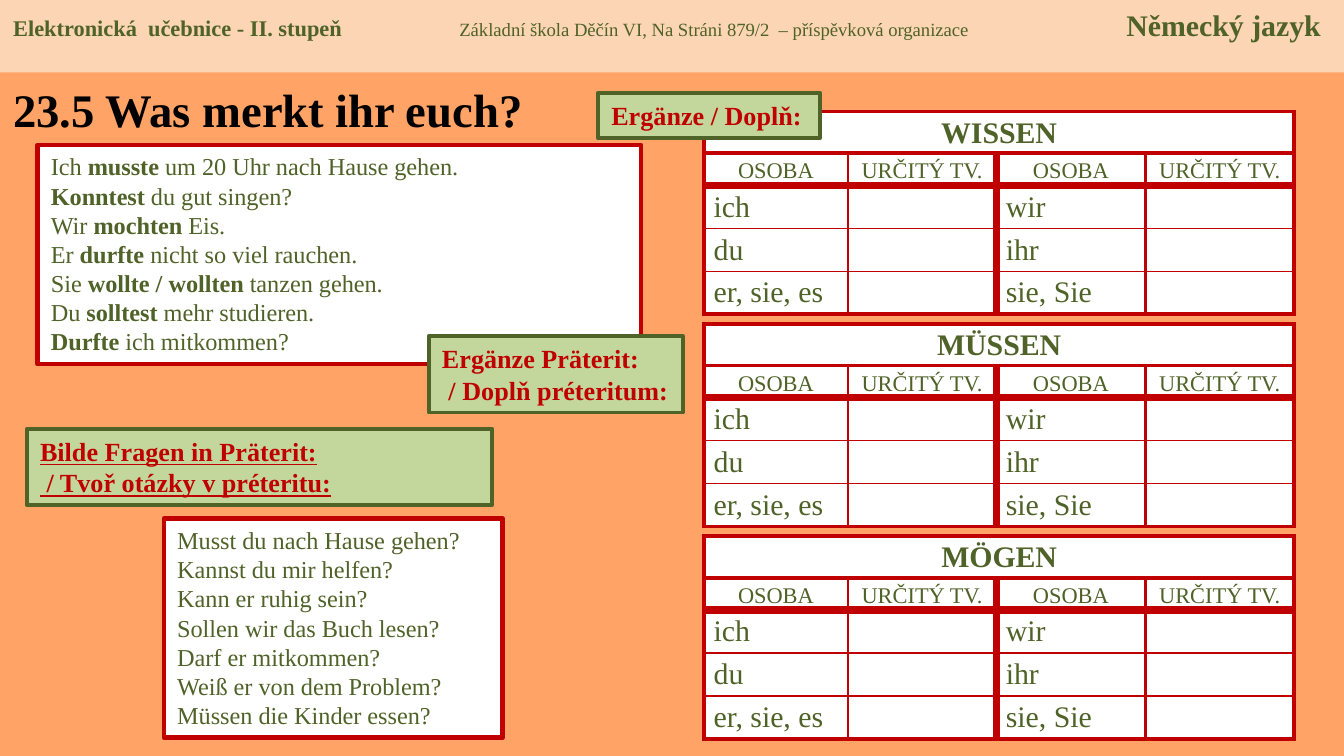
import pptx
import pptx.util
import pptx.dml.color
import pptx.enum.shapes
import pptx.enum.text
import pptx.oxml.ns
import lxml.etree

FONT = "Times New Roman"
COLORS = {
    "background": "FFA366", "header": "FCD5B5", "paper": "FFFFFF",
    "label": "C3D69B", "green": "4F6228", "red": "C00000", "black": "000000",
}
# Grid of square units, 0.1 inch each; boxes are (left, top, width, height)
COLUMNS, ROWS = 100, 56.25
ALIGN = pptx.enum.text.PP_ALIGN
ANCHOR = pptx.enum.text.MSO_ANCHOR

SENTENCES = [
    "Ich *musste* um 20 Uhr nach Hause gehen.",
    "*Konntest *du gut singen?",
    "Wir *mochten* Eis.",
    "Er *durfte *nicht so viel rauchen.",
    "Sie *wollte / wollten *tanzen gehen.",
    "Du *solltest *mehr studieren.",
    "*Durfte *ich mitkommen?",
]
QUESTIONS = [
    "Musst du nach Hause gehen?", "Kannst du mir helfen?",
    "Kann er ruhig sein?", "Sollen wir das Buch lesen?",
    "Darf er mitkommen?", "Weiß er von dem Problem?",
    "Müssen die Kinder essen?",
]
PERSONS = [("ich", "wir"), ("du", "ihr"), ("er, sie, es", "sie, Sie")]

TABLE_COLUMNS = [10.7, 11.1, 11.1, 11.1]
TABLE_ROWS = [3.1, 2.4, 3.2, 3.2, 3.2]
VERTICAL_RULES = [2.25, 1.5, 4.5, 1.5, 2.25]
HORIZONTAL_RULES = [2.25, 2.25, 4.5, 1, 1, 2.25]


def grid(units):
    return pptx.util.Inches(units / 10)


def color(name):
    return pptx.dml.color.RGBColor.from_string(COLORS[name])


def add_run(paragraph, text, size, ink, bold=False, underline=None):
    run = paragraph.add_run()
    run.text = text
    run.font.name = FONT
    run.font.size = pptx.util.Pt(size)
    run.font.color.rgb = color(ink)
    run.font.bold = bold
    run.font.underline = underline


def add_panel(slide, box, fill, outline=None, width=0):
    """Rectangle with left-aligned text starting at its top."""
    panel = slide.shapes.add_shape(
        pptx.enum.shapes.MSO_SHAPE.RECTANGLE, *map(grid, box))
    panel.shadow.inherit = False
    panel.fill.solid()
    panel.fill.fore_color.rgb = color(fill)
    if outline:
        panel.line.color.rgb = color(outline)
        panel.line.width = pptx.util.Pt(width)
    else:
        panel.line.fill.background()
    panel.text_frame.word_wrap = True
    panel.text_frame.vertical_anchor = ANCHOR.TOP
    panel.text_frame.paragraphs[0].alignment = ALIGN.LEFT
    return panel.text_frame


def next_paragraph(frame, index):
    paragraph = frame.add_paragraph() if index else frame.paragraphs[0]
    paragraph.alignment = ALIGN.LEFT
    return paragraph


def add_exercise(slide, box, lines):
    """White box of sentences; text between asterisks is bold."""
    frame = add_panel(slide, box, "paper", "red", 2.5)
    for index, line in enumerate(lines):
        paragraph = next_paragraph(frame, index)
        for part, text in enumerate(line.split("*")):
            if text:
                add_run(paragraph, text, 13, "green", bold=part % 2 == 1)


def add_label(slide, box, lines, underline=None):
    """Green instruction label."""
    frame = add_panel(slide, box, "label", "green", 2)
    for index, line in enumerate(lines):
        add_run(next_paragraph(frame, index), line, 14, "red", True, underline)


def add_header(slide, box):
    """Band with book, school and subject set on tab stops."""
    paragraph = add_panel(slide, box, "header").paragraphs[0]
    qn = pptx.oxml.ns.qn
    tabs = lxml.etree.SubElement(paragraph._p.get_or_add_pPr(), qn("a:tabLst"))
    for position, side in ((33.2, "l"), (box[2] - 2.7, "r")):
        lxml.etree.SubElement(tabs, qn("a:tab"), pos=str(grid(position)), algn=side)
    add_run(paragraph, "Elektronická  učebnice - II. stupeň\t", 12, "green", True)
    add_run(paragraph, "Základní škola Děčín VI, Na Stráni 879/2  – "
            "příspěvková organizace\t", 10, "green")
    add_run(paragraph, "Německý jazyk", 16, "green", True)


def add_title(slide, box, text):
    frame = slide.shapes.add_textbox(*map(grid, box)).text_frame
    frame.word_wrap = False
    frame.vertical_anchor = ANCHOR.MIDDLE
    add_run(next_paragraph(frame, 0), text, 25, "black", True)


def set_borders(cell, widths):
    qn = pptx.oxml.ns.qn
    properties = cell._tc.get_or_add_tcPr()
    for side, width in zip(("lnL", "lnR", "lnT", "lnB"), widths):
        line = lxml.etree.SubElement(
            properties, qn("a:" + side), w=str(pptx.util.Pt(width)))
        fill = lxml.etree.SubElement(line, qn("a:solidFill"))
        lxml.etree.SubElement(fill, qn("a:srgbClr"), val=COLORS["red"])


def add_verb_table(slide, box, verb):
    """Conjugation table: verb, column heads, persons with blanks."""
    content = [[verb, "", "", ""], ["OSOBA", "URČITÝ TV."] * 2]
    content += [[singular, "", plural, ""] for singular, plural in PERSONS]
    table = slide.shapes.add_table(
        len(TABLE_ROWS), len(TABLE_COLUMNS), *map(grid, box)).table
    table.first_row = table.horz_banding = False
    for column, share in zip(table.columns, TABLE_COLUMNS):
        column.width = grid(box[2] * share / sum(TABLE_COLUMNS))
    for row, share in zip(table.rows, TABLE_ROWS):
        row.height = grid(box[3] * share / sum(TABLE_ROWS))
    table.cell(0, 0).merge(table.cell(0, len(TABLE_COLUMNS) - 1))
    for r, texts in enumerate(content):
        rules = VERTICAL_RULES if r else [2.25] * 5
        for c, text in enumerate(texts):
            cell = table.cell(r, c)
            set_borders(cell, rules[c:c + 2] + HORIZONTAL_RULES[r:r + 2])
            cell.fill.solid()
            cell.fill.fore_color.rgb = color("paper")
            cell.margin_left = cell.margin_right = grid(0.7)
            cell.margin_top = cell.margin_bottom = 0
            cell.vertical_anchor = ANCHOR.MIDDLE if r == 1 else ANCHOR.TOP
            paragraph = cell.text_frame.paragraphs[0]
            paragraph.alignment = ALIGN.CENTER if r < 2 else ALIGN.LEFT
            paragraph.line_spacing = 1.15
            add_run(paragraph, text, 12 if r == 1 else 16, "green", r == 0)


def main():
    deck = pptx.Presentation()
    deck.slide_width, deck.slide_height = grid(COLUMNS), grid(ROWS)
    slide = deck.slides.add_slide(deck.slide_layouts[6])
    slide.background.fill.solid()
    slide.background.fill.fore_color.rgb = color("background")

    # Header and title
    add_header(slide, (0, 0, COLUMNS, 5.4))
    add_title(slide, (0, 5.5, 40.4, 5.2), "23.5 Was merkt ihr euch?")

    # Verb tables, stacked at equal steps
    for index, verb in enumerate(("WISSEN", "MÜSSEN", "MÖGEN")):
        add_verb_table(slide, (52.4, 8.3 + 15.8 * index, 43.9, 15.1), verb)
    add_label(slide, (44.5, 6.9, 16.5, 3.4), ["Ergänze / Doplň:"])

    # Sentences in the past tense
    add_exercise(slide, (2.8, 10.8, 44.9, 16.3), SENTENCES)
    add_label(slide, (31.9, 25, 18.9, 5.7),
              ["Ergänze Präterit:", " / Doplň préteritum:"])

    # Questions to transform
    add_label(slide, (2, 31.9, 34.6, 5.7),
              ["Bilde Fragen in Präterit:", " / Tvoř otázky v préteritu:"], True)
    add_exercise(slide, (12.2, 38.6, 25.2, 16.3), QUESTIONS)

    deck.save("out.pptx")


if __name__ == "__main__":
    main()
